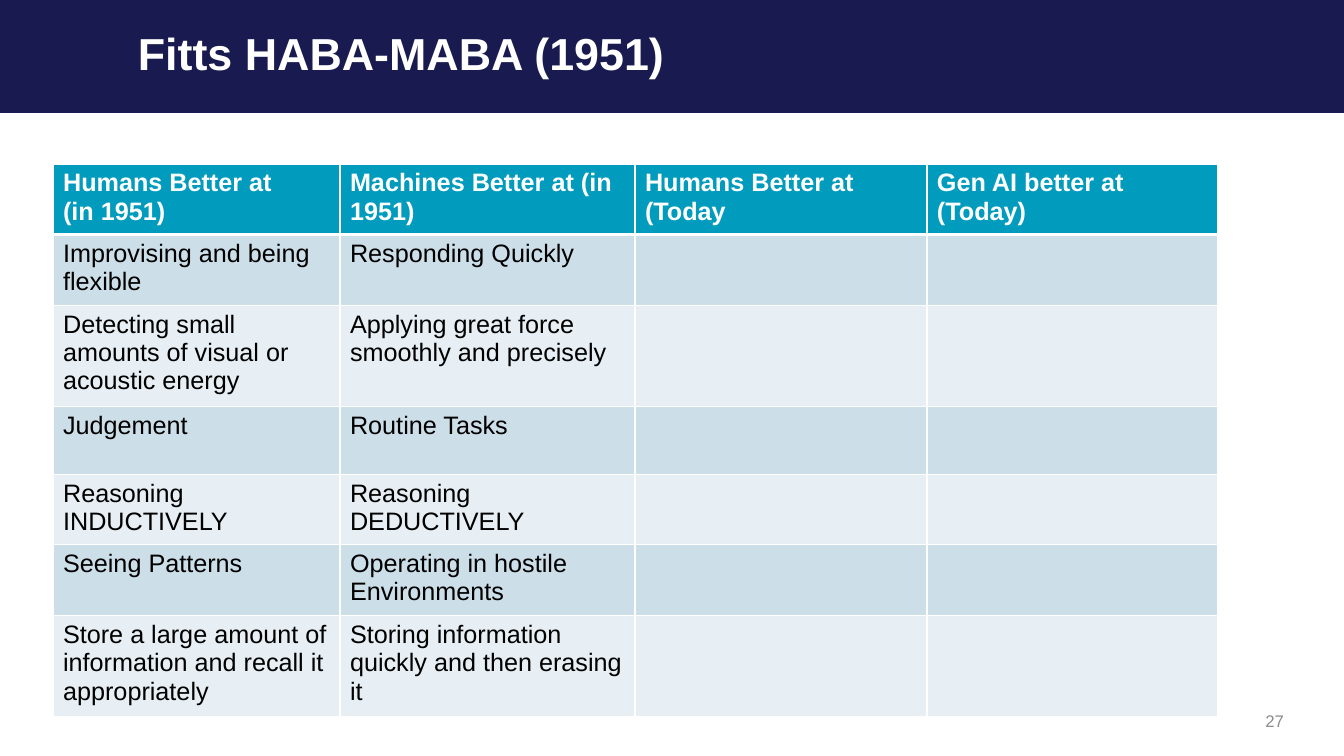
import pptx
import pptx.dml.color
import pptx.enum.shapes
import pptx.enum.text
import pptx.oxml.ns
import pptx.util
from lxml import etree

TITLE = "Fitts HABA-MABA (1951)"
SLIDE_NUMBER = "27"
HEADERS = [
    "Humans Better at\n(in 1951)",
    "Machines Better at (in 1951)",
    "Humans Better at (Today",
    "Gen AI better at (Today)",
]
ABILITIES = [
    ("Improvising and being flexible", "Responding Quickly"),
    ("Detecting small amounts of visual or acoustic energy",
     "Applying great force smoothly and precisely"),
    ("Judgement", "Routine Tasks"),
    ("Reasoning INDUCTIVELY", "Reasoning DEDUCTIVELY"),
    ("Seeing Patterns", "Operating in hostile Environments"),
    ("Store a large amount of information and recall it appropriately",
     "Storing information quickly and then erasing it"),
]

COLORS = {
    "navy": "191A4F", "teal": "009BBD", "band_dark": "CCDEE8",
    "band_light": "E7EFF4", "white": "FFFFFF", "black": "000000", "gray": "8C8C8C",
}
FONT = "Arial"
SLIDE_SIZE = (1344, 756)
BANNER_BOX = (0, 0, 1344, 113)
TITLE_BOX = (128, -1, 1166, 114)
NUMBER_BOX = (974, 701, 320, 40)
TABLE_LEFT, TABLE_TOP = 53, 164
COLUMN_WIDTHS = [287, 295, 292, 291]
ROW_HEIGHTS = [70, 70, 101, 68, 70, 71, 101]
EMU_PER_PX = 914400 / 100.8


def px(length):
    return pptx.util.Emu(round(length * EMU_PER_PX))


def rgb(name):
    return pptx.dml.color.RGBColor.from_string(COLORS[name])


def write(paragraph, text, size, color, bold=False):
    """Add text as styled runs, with a line break at each newline."""
    for index, line in enumerate(text.split("\n")):
        if index:
            paragraph.add_line_break()
        run = paragraph.add_run()
        run.text = line
        run.font.name = FONT
        run.font.size = pptx.util.Pt(size)
        run.font.bold = bold
        run.font.color.rgb = rgb(color)


def add_text(slide, box, text, size, color, bold=False):
    frame = slide.shapes.add_textbox(*map(px, box)).text_frame
    frame.word_wrap = True
    frame.vertical_anchor = pptx.enum.text.MSO_ANCHOR.MIDDLE
    write(frame.paragraphs[0], text, size, color, bold)
    return frame.paragraphs[0]


def set_borders(cell, widths):
    """Draw white borders; widths maps side letters L, R, T, B to points."""
    properties = cell._tc.get_or_add_tcPr()
    for side, width in widths.items():
        line = etree.SubElement(properties, pptx.oxml.ns.qn(f"a:ln{side}"),
                                w=str(pptx.util.Pt(width)))
        fill = etree.SubElement(line, pptx.oxml.ns.qn("a:solidFill"))
        etree.SubElement(fill, pptx.oxml.ns.qn("a:srgbClr"), val=COLORS["white"])


def add_ability_table(slide):
    rows = [HEADERS] + [(*pair, "", "") for pair in ABILITIES]
    table = slide.shapes.add_table(
        len(rows), len(HEADERS), px(TABLE_LEFT), px(TABLE_TOP),
        px(sum(COLUMN_WIDTHS)), px(sum(ROW_HEIGHTS))).table
    for column, width in zip(table.columns, COLUMN_WIDTHS):
        column.width = px(width)
    for row_index, texts in enumerate(rows):
        table.rows[row_index].height = px(ROW_HEIGHTS[row_index])
        is_header = row_index == 0
        band = "band_dark" if row_index % 2 else "band_light"
        for column_index, text in enumerate(texts):
            cell = table.cell(row_index, column_index)
            set_borders(cell, {"L": 1, "R": 1, "T": 3 if row_index == 1 else 1,
                               "B": 3 if is_header else 1})
            cell.fill.solid()
            cell.fill.fore_color.rgb = rgb("teal" if is_header else band)
            if text:
                write(cell.text_frame.paragraphs[0], text, 18,
                      "white" if is_header else "black", is_header)


def main():
    presentation = pptx.Presentation()
    presentation.slide_width, presentation.slide_height = map(px, SLIDE_SIZE)
    slide = presentation.slides.add_slide(presentation.slide_layouts[6])

    banner = slide.shapes.add_shape(
        pptx.enum.shapes.MSO_SHAPE.RECTANGLE, *map(px, BANNER_BOX))
    banner.shadow.inherit = False
    banner.fill.solid()
    banner.fill.fore_color.rgb = rgb("navy")
    banner.line.fill.background()

    number = add_text(slide, NUMBER_BOX, SLIDE_NUMBER, 12, "gray")
    number.alignment = pptx.enum.text.PP_ALIGN.RIGHT
    add_ability_table(slide)
    title = add_text(slide, TITLE_BOX, TITLE, 32, "white", bold=True)
    title.line_spacing = 0.9

    presentation.save("out.pptx")


if __name__ == "__main__":
    main()
